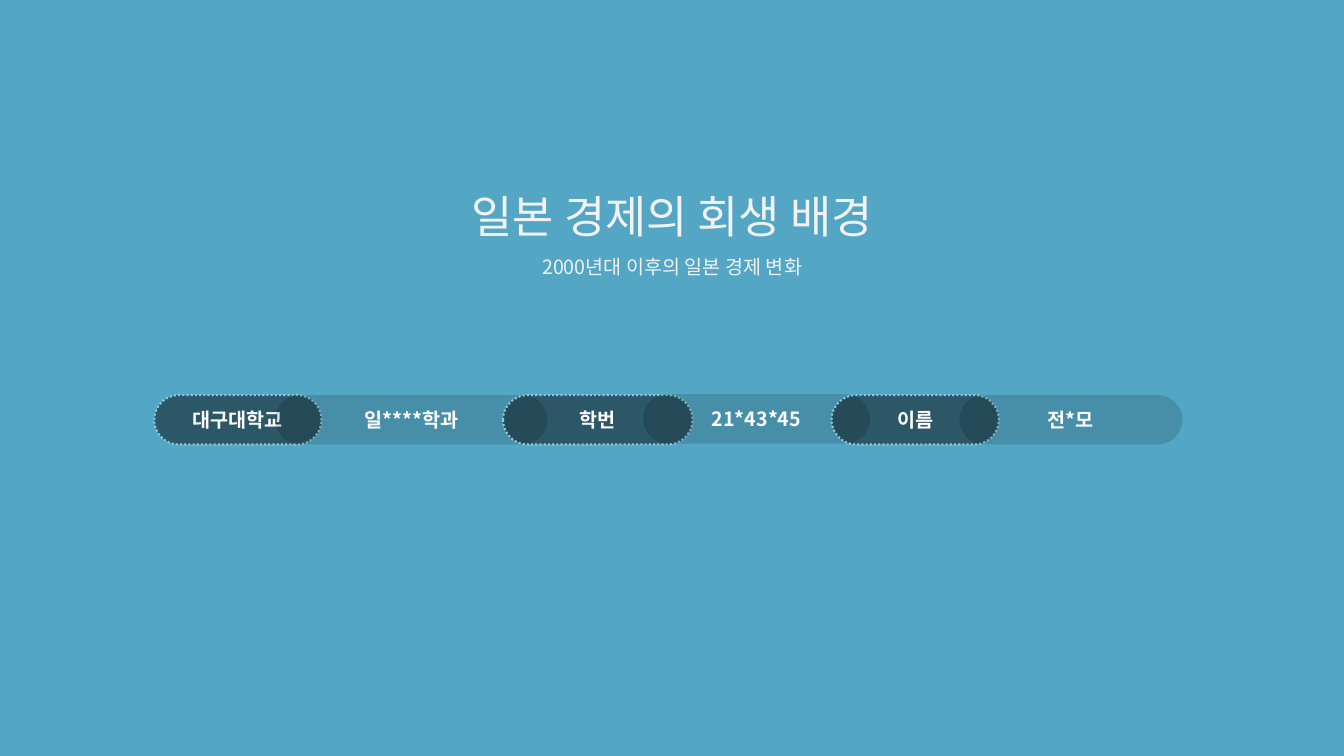
from lxml.etree import SubElement
from pptx import Presentation
from pptx.dml.color import RGBColor
from pptx.enum.dml import MSO_LINE
from pptx.enum.shapes import MSO_SHAPE
from pptx.enum.text import MSO_ANCHOR, MSO_AUTO_SIZE, PP_ALIGN
from pptx.oxml.ns import qn
from pptx.util import Pt

SKY = RGBColor(0x53, 0xA6, 0xC4)
PALE_BLUE = RGBColor(0x8F, 0xC6, 0xD9)
BLACK = RGBColor(0, 0, 0)
WHITE = RGBColor(255, 255, 255)
OFF_WHITE = RGBColor(0xF2, 0xF2, 0xF2)
FONT = "Noto Sans CJK KR"


def style_line(paragraph, text, size, color, bold=False):
    paragraph.text = text
    paragraph.alignment = PP_ALIGN.CENTER
    for run in paragraph.runs:
        font = run.font
        font.name = FONT
        font.size = Pt(size)
        font.bold = bold
        font.color.rgb = color
        SubElement(font._element, qn("a:ea"), typeface=FONT)


prs = Presentation()
prs.slide_width, prs.slide_height = Pt(960), Pt(540)
slide = prs.slides.add_slide(prs.slide_layouts[6])
slide.background.fill.solid()
slide.background.fill.fore_color.rgb = SKY

heading = slide.shapes.add_textbox(Pt(262.8), Pt(112.3), Pt(434.9), Pt(90.7)).text_frame
heading.word_wrap = True
heading.auto_size = MSO_AUTO_SIZE.SHAPE_TO_FIT_TEXT
title, subtitle = heading.paragraphs[0], heading.add_paragraph()
style_line(title, "일본 경제의 회생 배경", 32, OFF_WHITE)
style_line(subtitle, "2000년대 이후의 일본 경제 변화", 14, OFF_WHITE)
title.line_spacing = subtitle.line_spacing = 1.5

PILLS = [
    ("대구대학교", 110.2, 282.2, 119.5, True),
    ("일****학과", 196.6, 282.2, 194.4, False),
    ("학번", 359.3, 282.2, 135.4, True),
    ("21*43*45", 459.4, 281.5, 162, False),
    ("이름", 594, 282.2, 119.5, True),
    ("전*모", 685.4, 282.2, 159.1, False),
]
for text, left, top, width, is_label in PILLS:
    pill = slide.shapes.add_shape(
        MSO_SHAPE.ROUNDED_RECTANGLE, Pt(left), Pt(top), Pt(width), Pt(35.3))
    pill.adjustments[0] = 0.5
    pill.shadow.inherit = False
    pill.fill.solid()
    pill.fill.fore_color.rgb = BLACK
    tint = pill.fill._xPr.find(qn("a:solidFill"))[0]
    SubElement(tint, qn("a:alpha"), val="47000" if is_label else "14000")
    if is_label:
        pill.line.color.rgb = PALE_BLUE
        pill.line.width = Pt(1.5)
        pill.line.dash_style = MSO_LINE.ROUND_DOT
    else:
        pill.line.fill.background()
    pill.text_frame.vertical_anchor = MSO_ANCHOR.MIDDLE
    style_line(pill.text_frame.paragraphs[0], text, 14, WHITE, bold=True)

prs.save("out.pptx")
